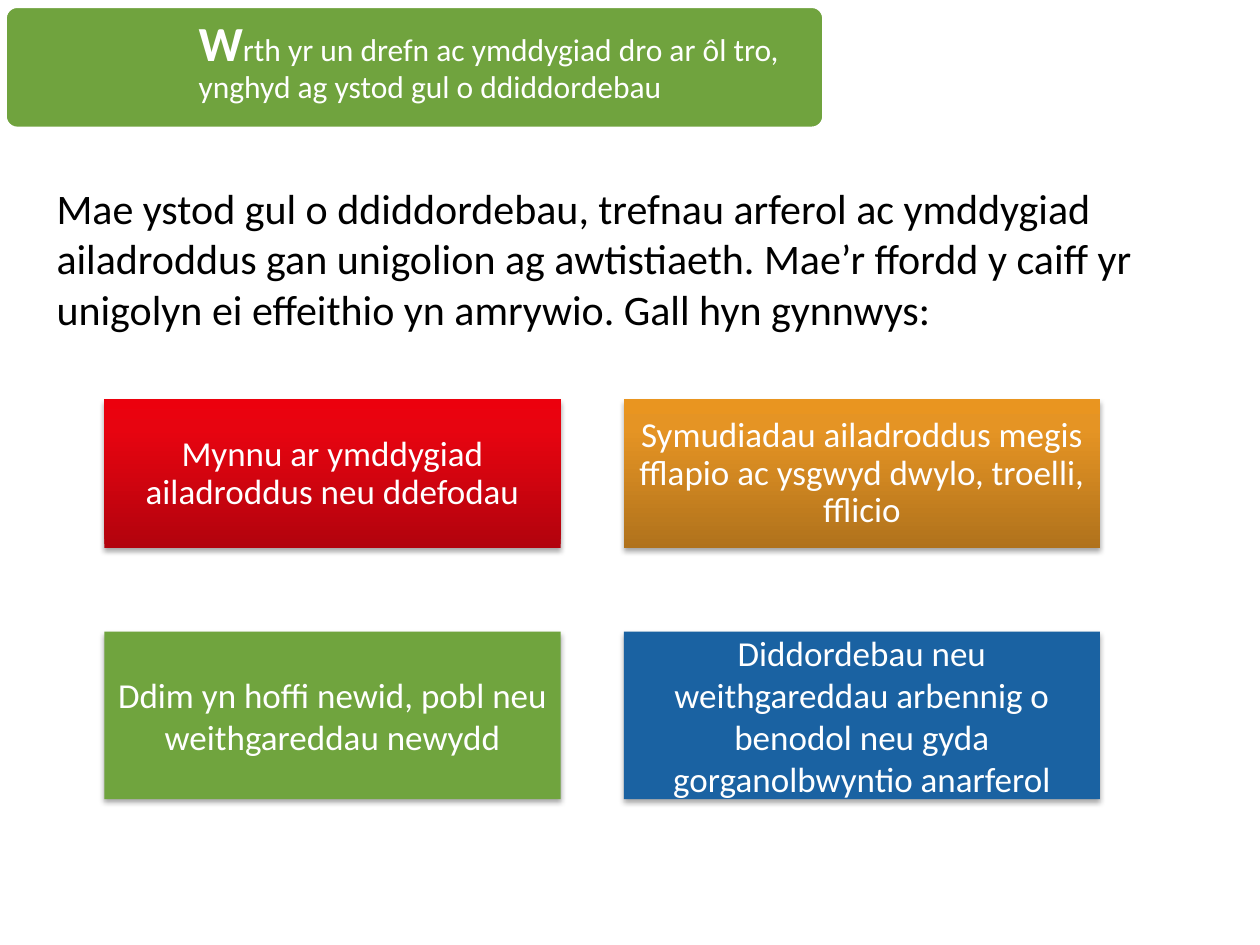
"""Build a slide on routines, repetitive behaviour and narrow interests."""
import pptx
import pptx.dml.color
import pptx.enum.shapes
import pptx.enum.text
import pptx.oxml
import pptx.oxml.ns
import pptx.util

Pt = pptx.util.Pt
SHAPE = pptx.enum.shapes.MSO_SHAPE
ALIGN = pptx.enum.text.PP_ALIGN
MIDDLE = pptx.enum.text.MSO_ANCHOR.MIDDLE

FONT = "Calibri"
WHITE, BLACK, GREEN = "FFFFFF", "000000", "70A33E"
HEADING = [
    ("W", 28, True),
    ("rth yr un drefn ac ymddygiad dro ar ôl tro, ynghyd ag ystod gul o ddiddordebau", 18, False),
]
INTRO = (
    "Mae ystod gul o ddiddordebau, trefnau arferol ac ymddygiad ailadroddus gan unigolion "
    "ag awtistiaeth. Mae’r ffordd y caiff yr unigolyn ei effeithio yn amrywio. "
    "Gall hyn gynnwys:"
)
EXAMPLE_ROWS = [
    {"top": 228.2, "height": 85, "spacing": 0.9, "examples": [
        ("Mynnu ar ymddygiad ailadroddus neu ddefodau",
         [(0, "B2030D"), (80, "E70410"), (100, "EC000D")]),
        ("Symudiadau ailadroddus megis fflapio ac ysgwyd dwylo, troelli, fflicio",
         [(0, "B0721C"), (80, "E59424"), (100, "E99520")]),
    ]},
    {"top": 361, "height": 95.6, "spacing": 1.0, "examples": [
        ("Ddim yn hoffi newid, pobl neu weithgareddau newydd", [(0, "70A43E")]),
        ("Diddordebau neu weithgareddau arbennig o benodol neu gyda "
         "gorganolbwyntio anarferol", [(0, "1A62A2")]),
    ]},
]
COLUMNS = [(59.6, 260.8), (356.5, 272)]


def rgb(value):
    return pptx.dml.color.RGBColor.from_string(value)


def write(shape, runs, color, align=ALIGN.LEFT, spacing=1.0):
    frame = shape.text_frame
    frame.word_wrap = True
    paragraph = frame.paragraphs[0]
    paragraph.alignment = align
    paragraph.line_spacing = spacing
    for text, size, bold in runs:
        run = paragraph.add_run()
        run.text = text
        run.font.name = FONT
        run.font.size = Pt(size)
        run.font.bold = bold
        run.font.color.rgb = rgb(color)
    return frame


def paint(shape, stops):
    if len(stops) == 1:
        shape.fill.solid()
        shape.fill.fore_color.rgb = rgb(stops[0][1])
        return
    shape.fill.gradient()
    shape.fill.gradient_angle = 90
    stop_list = shape._element.spPr.find(".//" + pptx.oxml.ns.qn("a:gsLst"))
    for stop in list(stop_list):
        stop_list.remove(stop)
    for percent, color in stops:
        stop_list.append(pptx.oxml.parse_xml(
            f'<a:gs {pptx.oxml.ns.nsdecls("a")} pos="{percent * 1000}">'
            f'<a:srgbClr val="{color}"/></a:gs>'))


def cast_shadow(shape):
    shape.shadow.inherit = False
    effects = shape._element.spPr.find(pptx.oxml.ns.qn("a:effectLst"))
    effects.append(pptx.oxml.parse_xml(
        f'<a:outerShdw {pptx.oxml.ns.nsdecls("a")} blurRad="{Pt(3.1)}" dist="{Pt(1.8)}" '
        f'dir="5400000" rotWithShape="0"><a:srgbClr val="{BLACK}">'
        '<a:alpha val="35000"/></a:srgbClr></a:outerShdw>'))


def add_heading(slide):
    banner = slide.shapes.add_shape(
        SHAPE.ROUNDED_RECTANGLE, Pt(2.9), Pt(3.6), Pt(468), Pt(69.8))
    banner.adjustments[0] = 0.1
    banner.shadow.inherit = False
    paint(banner, [(0, GREEN)])
    banner.line.color.rgb = rgb(WHITE)
    banner.line.width = Pt(2)
    heading = slide.shapes.add_textbox(Pt(105.1), Pt(3.6), Pt(365.8), Pt(64))
    frame = write(heading, HEADING, WHITE, spacing=0.9)
    frame.vertical_anchor = MIDDLE
    frame.margin_left = frame.margin_right = Pt(8.4)
    frame.margin_top = frame.margin_bottom = Pt(8.4)


def add_example(slide, column, row, text, stops):
    left, width = column
    example = slide.shapes.add_shape(
        SHAPE.RECTANGLE, Pt(left), Pt(row["top"]), Pt(width), Pt(row["height"]))
    paint(example, stops)
    example.line.fill.background()
    cast_shadow(example)
    frame = write(example, [(text, 20, False)], WHITE, ALIGN.CENTER, row["spacing"])
    frame.vertical_anchor = MIDDLE


def main():
    deck = pptx.Presentation()
    deck.slide_width, deck.slide_height = Pt(720), Pt(540)
    slide = deck.slides.add_slide(deck.slide_layouts[6])
    intro = slide.shapes.add_textbox(Pt(25.2), Pt(100.8), Pt(669), Pt(94.4))
    write(intro, [(INTRO, 24, False)], BLACK)
    add_heading(slide)
    for row in EXAMPLE_ROWS:
        for column, (text, stops) in zip(COLUMNS, row["examples"]):
            add_example(slide, column, row, text, stops)
    deck.save("out.pptx")


if __name__ == "__main__":
    main()
